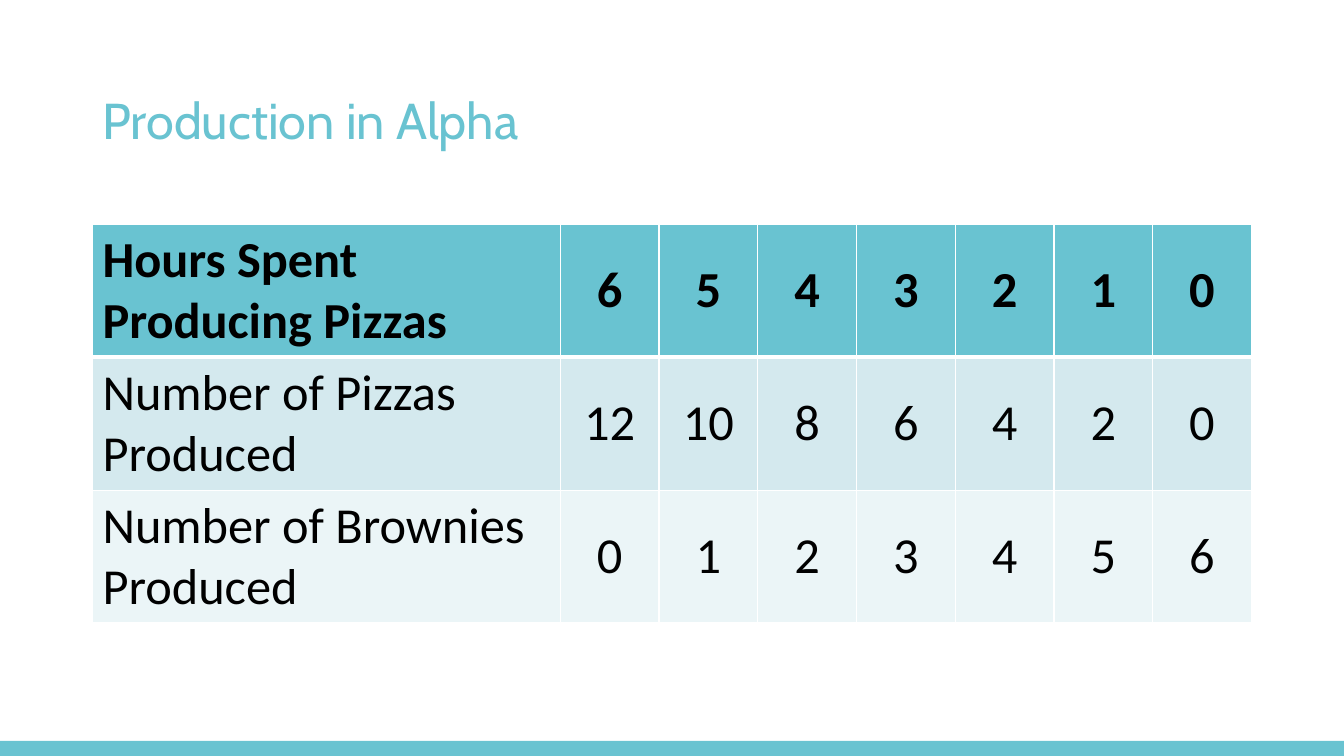
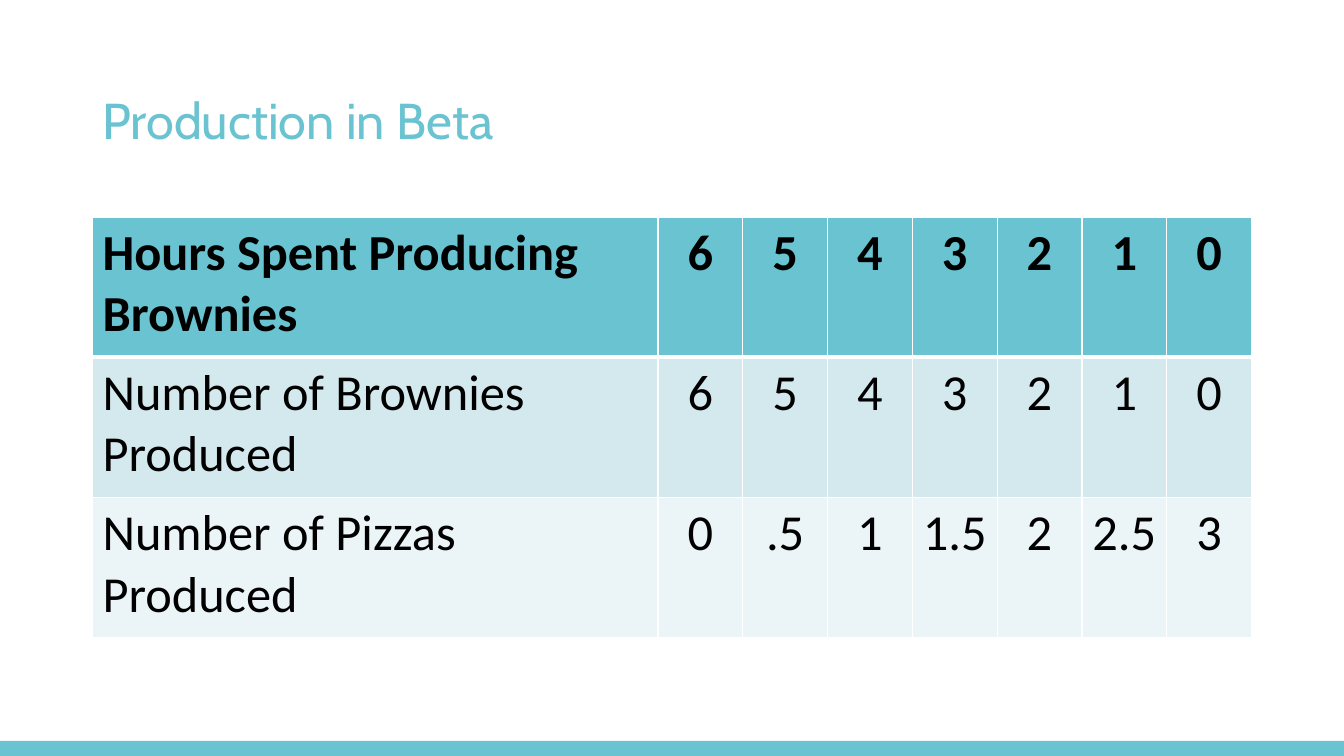
from dataclasses import dataclass

from lxml.etree import SubElement
from pptx import Presentation
from pptx.dml.color import RGBColor
from pptx.enum.shapes import MSO_SHAPE
from pptx.enum.text import MSO_ANCHOR, PP_ALIGN
from pptx.oxml.ns import qn
from pptx.util import Cm, Pt


@dataclass(frozen=True)
class Theme:
    accent: str = "69C3D1"
    row_fills: tuple = ("69C3D1", "D4E9EE", "EBF5F7")
    text: str = "000000"
    grid: str = "FFFFFF"
    title_font: str = "Cabin"
    body_font: str = "Calibri"
    text_size: int = 36
    grid_width: int = 1
    header_rule_width: int = 3


SLIDE_WIDTH, SLIDE_HEIGHT = 33.87, 19.05
MARGIN, CONTENT_WIDTH = 2.33, 29.21
BAND_HEIGHT = 0.38


def write(frame, text, *, font, size, color, bold=False,
          align=PP_ALIGN.LEFT, line_spacing=None):
    paragraph = frame.paragraphs[0]
    paragraph.alignment = align
    paragraph.line_spacing = line_spacing
    run = paragraph.add_run()
    run.text = text
    run.font.name = font
    run.font.size = Pt(size)
    run.font.bold = bold
    run.font.color.rgb = RGBColor.from_string(color)


def set_border(cell, side, color, width):
    """Draw one cell side (L, R, T or B); call before filling the cell."""
    border = SubElement(cell._tc.get_or_add_tcPr(), qn(f"a:ln{side}"), w=str(Pt(width)))
    fill = SubElement(border, qn("a:solidFill"))
    SubElement(fill, qn("a:srgbClr"), val=color)


class Deck:
    def __init__(self, theme):
        self.theme = theme
        self.presentation = Presentation()
        self.presentation.slide_width = Cm(SLIDE_WIDTH)
        self.presentation.slide_height = Cm(SLIDE_HEIGHT)
        self.slide = None

    def start_slide(self, title):
        self.slide = self.presentation.slides.add_slide(self.presentation.slide_layouts[6])
        self.band()
        self.title(title)

    def band(self):
        band = self.slide.shapes.add_shape(
            MSO_SHAPE.RECTANGLE, 0, Cm(SLIDE_HEIGHT - BAND_HEIGHT),
            Cm(SLIDE_WIDTH), Cm(BAND_HEIGHT))
        band.shadow.inherit = False
        band.fill.solid()
        band.fill.fore_color.rgb = RGBColor.from_string(self.theme.accent)
        band.line.fill.background()

    def title(self, text):
        frame = self.slide.shapes.add_textbox(
            Cm(MARGIN), Cm(2.26), Cm(CONTENT_WIDTH), Cm(1.68)).text_frame
        frame.word_wrap = True
        frame.vertical_anchor = MSO_ANCHOR.MIDDLE
        write(frame, text, font=self.theme.title_font, size=self.theme.text_size,
              color=self.theme.accent, line_spacing=0.9)

    def production_table(self, rows, *, top, label_width, row_height, value_anchor):
        """Lay out a label column followed by equal value columns."""
        value_count = len(rows[0]) - 1
        table = self.slide.shapes.add_table(
            len(rows), value_count + 1, Cm(MARGIN), Cm(top),
            Cm(CONTENT_WIDTH), Cm(row_height * len(rows))).table
        table.horz_banding = False
        for column in table.columns:
            column.width = Cm((CONTENT_WIDTH - label_width) / value_count)
        table.columns[0].width = Cm(label_width)
        for row_index, row in enumerate(rows):
            table.rows[row_index].height = Cm(row_height)
            for column_index, text in enumerate(row):
                self.cell(table.cell(row_index, column_index), text, row_index,
                          is_label=column_index == 0, value_anchor=value_anchor)

    def cell(self, cell, text, row_index, *, is_label, value_anchor):
        theme = self.theme
        is_header = row_index == 0
        header_rule_side = {0: "B", 1: "T"}.get(row_index)
        for side in "LRTB":
            width = theme.header_rule_width if side == header_rule_side else theme.grid_width
            set_border(cell, side, theme.grid, width)
        cell.fill.solid()
        cell.fill.fore_color.rgb = RGBColor.from_string(theme.row_fills[row_index])
        cell.vertical_anchor = MSO_ANCHOR.TOP if is_label else value_anchor
        write(cell.text_frame, text, font=theme.body_font, size=theme.text_size,
              color=theme.text, bold=is_header,
              align=PP_ALIGN.LEFT if is_label else PP_ALIGN.CENTER)


def main():
    deck = Deck(Theme())

    deck.start_slide("Production in Alpha")
    deck.production_table(
        [["Hours Spent Producing Pizzas", "6", "5", "4", "3", "2", "1", "0"],
         ["Number of Pizzas Produced", "12", "10", "8", "6", "4", "2", "0"],
         ["Number of Brownies Produced", "0", "1", "2", "3", "4", "5", "6"]],
        top=5.65, label_width=11.79, row_height=3.35, value_anchor=MSO_ANCHOR.MIDDLE)

    deck.start_slide("Production in Beta")
    deck.production_table(
        [["Hours Spent Producing Brownies", "6", "5", "4", "3", "2", "1", "0"],
         ["Number of Brownies Produced", "6", "5", "4", "3", "2", "1", "0"],
         ["Number of Pizzas Produced", "0", ".5", "1", "1.5", "2", "2.5", "3"]],
        top=5.47, label_width=14.25, row_height=3.53, value_anchor=MSO_ANCHOR.TOP)

    deck.presentation.save("out.pptx")


if __name__ == "__main__":
    main()
